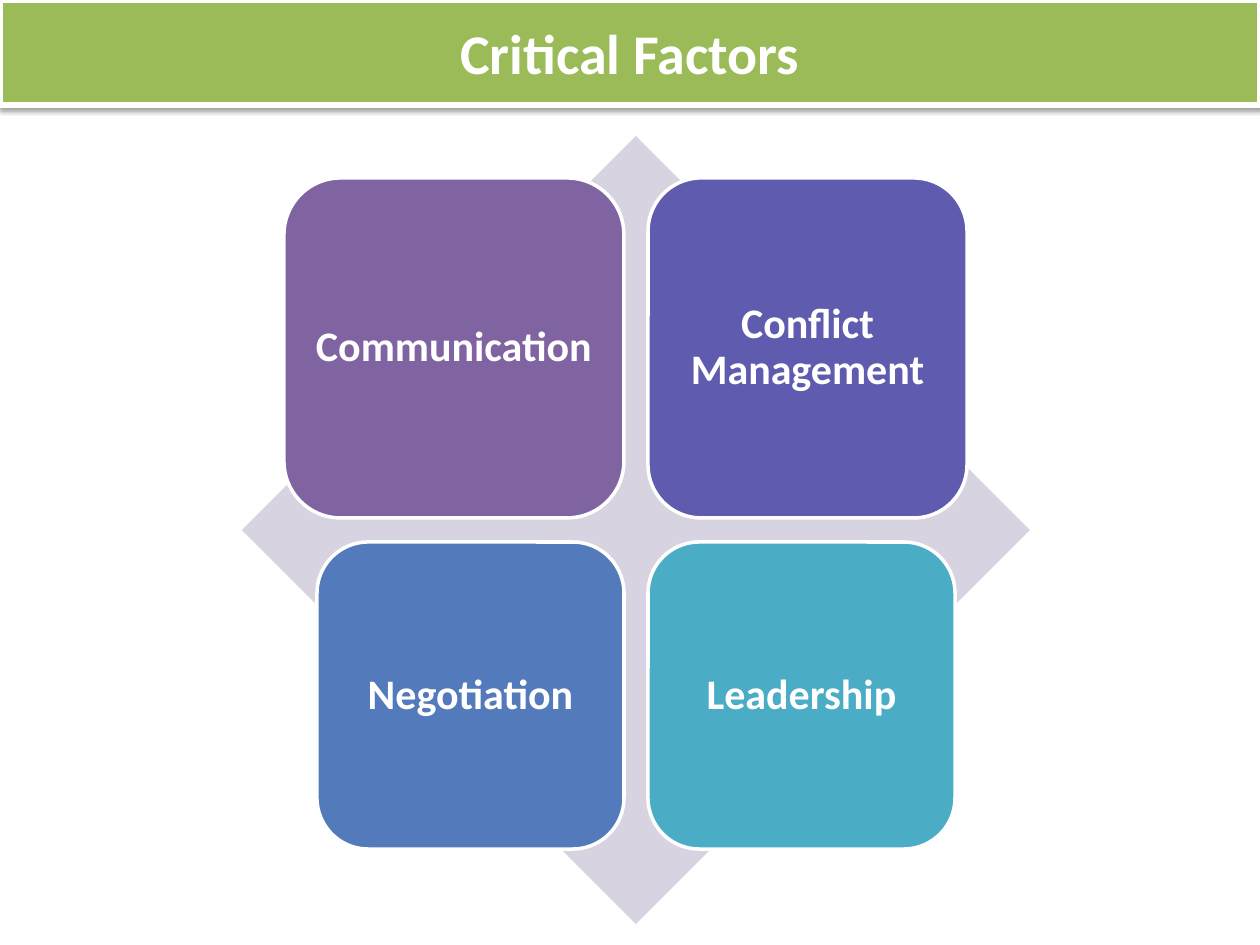
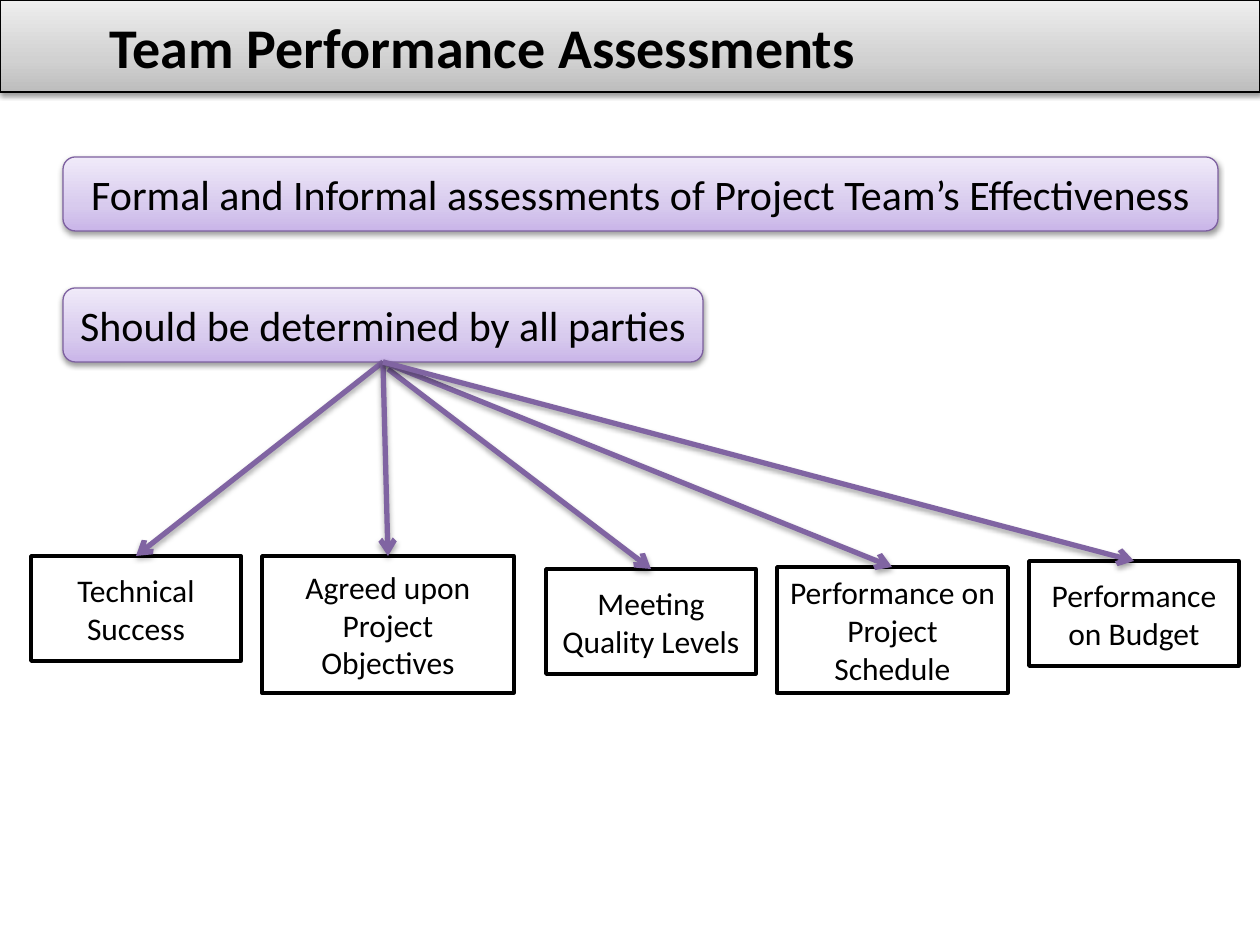
from copy import deepcopy

from lxml import etree
from pptx import Presentation
from pptx import util as u
from pptx.dml.color import RGBColor
from pptx.enum import shapes, text
from pptx.oxml.ns import qn

PX = 7257
FONT = "Calibri"
WHITE, BLACK, PURPLE = "FFFFFF", "000000", "8064A2"
GREY_FADE = ("BDBDBD", "D1D1D1", "EEEEEE")
LILAC_FADE = ("C9B5E8", "D8CBEE", "F0EAF9")
KIND = shapes.MSO_SHAPE
CENTER, LEFT = text.PP_ALIGN.CENTER, text.PP_ALIGN.LEFT


def paint(item, fill=None, line=None, width=0.75, shadow=0):
    if isinstance(fill, str):
        item.fill.solid()
        item.fill.fore_color.rgb = RGBColor.from_string(fill)
    elif fill:
        item.fill.gradient()
        item.fill.gradient_angle = 90
        stop_list = item.element.spPr.find(".//" + qn("a:gsLst"))
        stop_list.insert(1, deepcopy(stop_list[0]))
        for stop, place, color in zip(item.fill.gradient_stops, (0, 0.35, 1), fill):
            stop.position = place
            stop.color.rgb = RGBColor.from_string(color)
    if line:
        item.line.color.rgb = RGBColor.from_string(line)
        item.line.width = u.Pt(width)
    else:
        item.line.fill.background()
    effects = etree.SubElement(item.element.spPr, qn("a:effectLst"))
    if shadow:
        outer = etree.SubElement(effects, qn("a:outerShdw"), blurRad="40000",
                                 dist="20000", dir="5400000", rotWithShape="0")
        color = etree.SubElement(outer, qn("a:srgbClr"), val=BLACK)
        etree.SubElement(color, qn("a:alpha"), val=str(shadow * 1000))


def write(box, words, size=24, color=BLACK, bold=False, align=CENTER,
          inset=None, spacing=1.0):
    frame = box.text_frame
    frame.word_wrap = True
    frame.auto_size = text.MSO_AUTO_SIZE.NONE
    frame.vertical_anchor = text.MSO_ANCHOR.MIDDLE
    if inset is not None:
        frame.margin_left = inset * PX
        if align == CENTER:
            frame.margin_right = frame.margin_top = frame.margin_bottom = inset * PX
    para = frame.paragraphs[0]
    para.alignment = align
    para.line_spacing = spacing
    span = para.add_run()
    span.text = words
    span.font.name = FONT
    span.font.size = u.Pt(size)
    span.font.bold = bold
    span.font.color.rgb = RGBColor.from_string(color)


deck = Presentation()
deck.slide_width, deck.slide_height = u.Inches(10), u.Inches(7.5)

titles = [
    ("Critical Factors", 105, "9BBB59", WHITE, 3, WHITE, CENTER, None),
    ("Team Performance Assessments", 92, GREY_FADE, BLACK, 0.75, BLACK, LEFT, 110),
]
pages = []
for words, height, fill, line, width, color, align, inset in titles:
    page = deck.slides.add_slide(deck.slide_layouts[5])
    band = page.shapes.title
    band.left, band.top, band.width, band.height = 0, 0, deck.slide_width, height * PX
    paint(band, fill, line, width, shadow=38)
    write(band, words, 32, color, True, align, inset)
    pages.append(page)
factors_page, assessment_page = pages

diamond = factors_page.shapes.add_shape(KIND.DIAMOND, 242 * PX, 136 * PX, 788 * PX, 788 * PX)
paint(diamond, "D8D3E0")

middle_x, middle_y, half_gap = 636, 530, 12
factors = [
    ("Communication", 0, 0, 340, 340, PURPLE),
    ("Conflict Management", 1, 0, 319, 340, "5F5BAE"),
    ("Negotiation", 0, 1, 307, 307, "537ABA"),
    ("Leadership", 1, 1, 307, 307, "4BACC6"),
]
for words, column, row, width, height, color in factors:
    left = middle_x + half_gap if column else middle_x - half_gap - width
    top = middle_y + half_gap if row else middle_y - half_gap - height
    tile = factors_page.shapes.add_shape(
        KIND.ROUNDED_RECTANGLE, left * PX, top * PX, width * PX, height * PX)
    paint(tile, color, WHITE, 2)
    write(tile, words, color=WHITE, bold=True, inset=11, spacing=0.9)

statements = [
    ("Formal and Informal assessments of Project Team’s Effectiveness", 157, 1155),
    ("Should be determined by all parties", 288, 640),
]
for words, top, width in statements:
    pill = assessment_page.shapes.add_shape(
        KIND.ROUNDED_RECTANGLE, 63 * PX, top * PX, width * PX, 74 * PX)
    paint(pill, LILAC_FADE, "7D60A0", shadow=38)
    write(pill, words)

criteria = [
    ("Technical Success", 31, 556, 210, 105, 383, 362),
    ("Agreed upon Project Objectives", 262, 556, 252, 137, 383, 362),
    ("Meeting Quality Levels", 546, 569, 210, 105, 388, 369),
    ("Performance on Project Schedule", 777, 567, 231, 126, 383, 362),
    ("Performance on Budget", 1029, 561, 210, 105, 383, 362),
]
for words, left, top, width, height, *start in criteria:
    box = assessment_page.shapes.add_shape(
        KIND.RECTANGLE, left * PX, top * PX, width * PX, height * PX)
    paint(box, WHITE, BLACK, 2)
    write(box, words, 18)

for words, left, top, width, height, start_x, start_y in criteria:
    arrow = assessment_page.shapes.add_connector(
        shapes.MSO_CONNECTOR.STRAIGHT, start_x * PX, start_y * PX,
        (left + width // 2) * PX, top * PX)
    paint(arrow, line=PURPLE, width=3, shadow=35)
    etree.SubElement(arrow.line._get_or_add_ln(), qn("a:tailEnd"), type="arrow")

deck.save("out.pptx")
